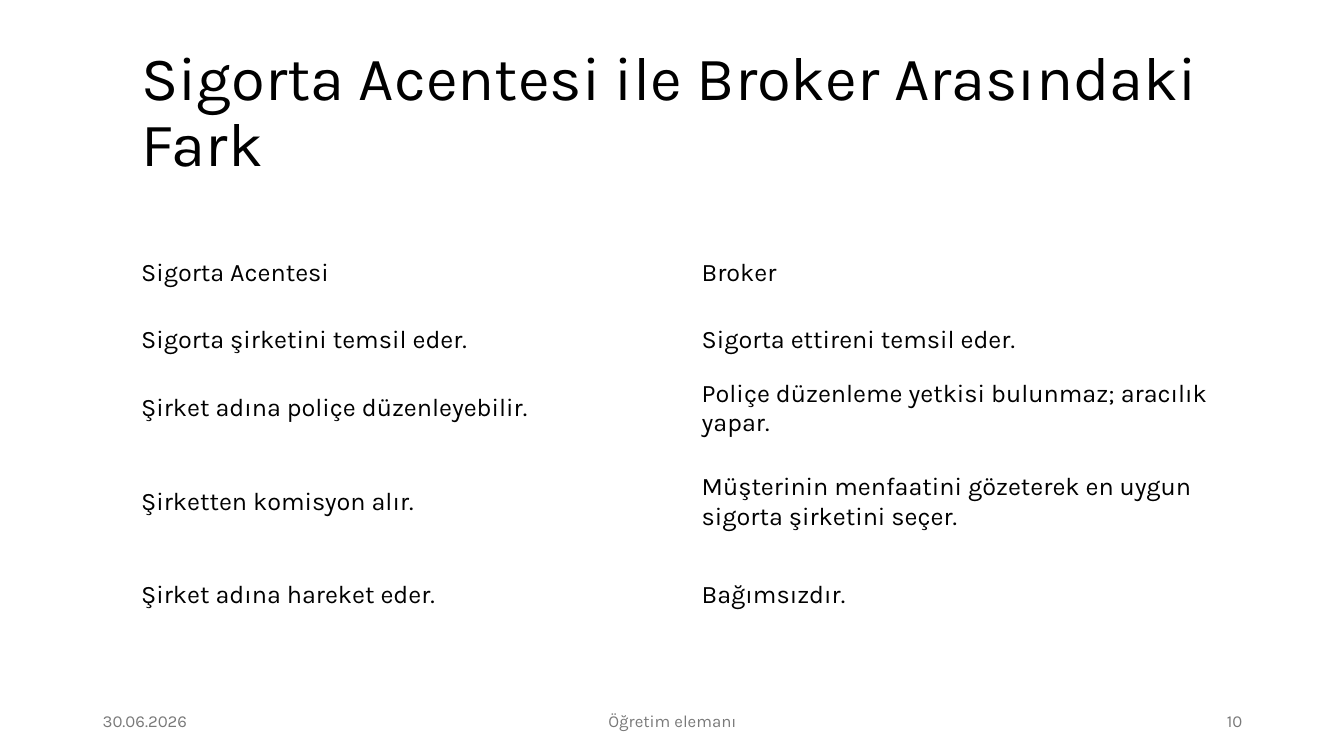
from pptx import Presentation
from pptx.dml.color import RGBColor
from pptx.enum.text import MSO_ANCHOR, PP_ALIGN
from pptx.util import Inches, Pt

MIDDLE = MSO_ANCHOR.MIDDLE
LEFT, CENTER, RIGHT = PP_ALIGN.LEFT, PP_ALIGN.CENTER, PP_ALIGN.RIGHT
FONT = "Karla"
BLACK, GRAY = "000000", "797979"
TITLE_ONLY = 5

TITLE = "Sigorta Acentesi ile Broker Arasındaki Fark"
COMPARISON = [
    ("Sigorta Acentesi", "Broker"),
    ("Sigorta şirketini temsil eder.", "Sigorta ettireni temsil eder."),
    ("Şirket adına poliçe düzenleyebilir.",
     "Poliçe düzenleme yetkisi bulunmaz; aracılık yapar."),
    ("Şirketten komisyon alır.",
     "Müşterinin menfaatini gözeterek en uygun sigorta şirketini seçer."),
    ("Şirket adına hareket eder.", "Bağımsızdır."),
]
ROW_HEIGHTS = [0.67, 0.67, 0.67, 1.17, 0.67]


def color(value):
    """Return the colour for a hex string."""
    return RGBColor.from_string(value)


def write(frame, text, size=18, fill=BLACK, align=LEFT, spacing=None):
    """Put one formatted paragraph into a text frame."""
    para = frame.paragraphs[0]
    para.alignment = align
    if spacing:
        para.line_spacing = spacing
    span = para.add_run()
    span.text = text
    span.font.name = FONT
    span.font.size = Pt(size)
    span.font.color.rgb = color(fill)


def add_title(page, left, top, width, height):
    """Place and fill the title placeholder."""
    title = page.shapes.title
    title.left, title.top = Inches(left), Inches(top)
    title.width, title.height = Inches(width), Inches(height)
    frame = title.text_frame
    frame.word_wrap = True
    frame.vertical_anchor = MIDDLE
    write(frame, TITLE, size=44, spacing=0.9)


def add_comparison(page, left, top, width):
    """Draw the plain comparison table with equal columns."""
    columns = len(COMPARISON[0])
    table = page.shapes.add_table(
        len(COMPARISON), columns, Inches(left), Inches(top),
        Inches(width), Inches(sum(ROW_HEIGHTS))).table
    table.first_row = False
    table.horz_banding = False
    for column in table.columns:
        column.width = Inches(width / columns)
    for row, height, texts in zip(table.rows, ROW_HEIGHTS, COMPARISON):
        row.height = Inches(height)
        for cell, text in zip(row.cells, texts):
            cell.fill.background()
            cell.vertical_anchor = MIDDLE
            write(cell.text_frame, text)


def add_footer(page, left, top, width, height):
    """Set date, lecturer and page number along the bottom."""
    side, middle = 3, 4.5
    parts = [
        ("30.06.2026", left, side, LEFT),
        ("Öğretim elemanı", left + (width - middle) / 2, middle, CENTER),
        ("10", left + width - side, side, RIGHT),
    ]
    for text, part_left, part_width, align in parts:
        box = page.shapes.add_textbox(Inches(part_left), Inches(top),
                                      Inches(part_width), Inches(height))
        frame = box.text_frame
        frame.word_wrap = True
        frame.vertical_anchor = MIDDLE
        write(frame, text, size=12, fill=GRAY, align=align)


def main():
    """Build and save the deck."""
    deck = Presentation()
    deck.slide_width, deck.slide_height = Inches(13.33), Inches(7.5)
    page = deck.slides.add_slide(deck.slide_layouts[TITLE_ONLY])
    add_title(page, 1.3, 0.4, 11.12, 1.45)
    add_comparison(page, 1.3, 2.37, 11.12)
    add_footer(page, 0.92, 6.95, 11.5, 0.4)
    deck.save("out.pptx")


if __name__ == "__main__":
    main()
